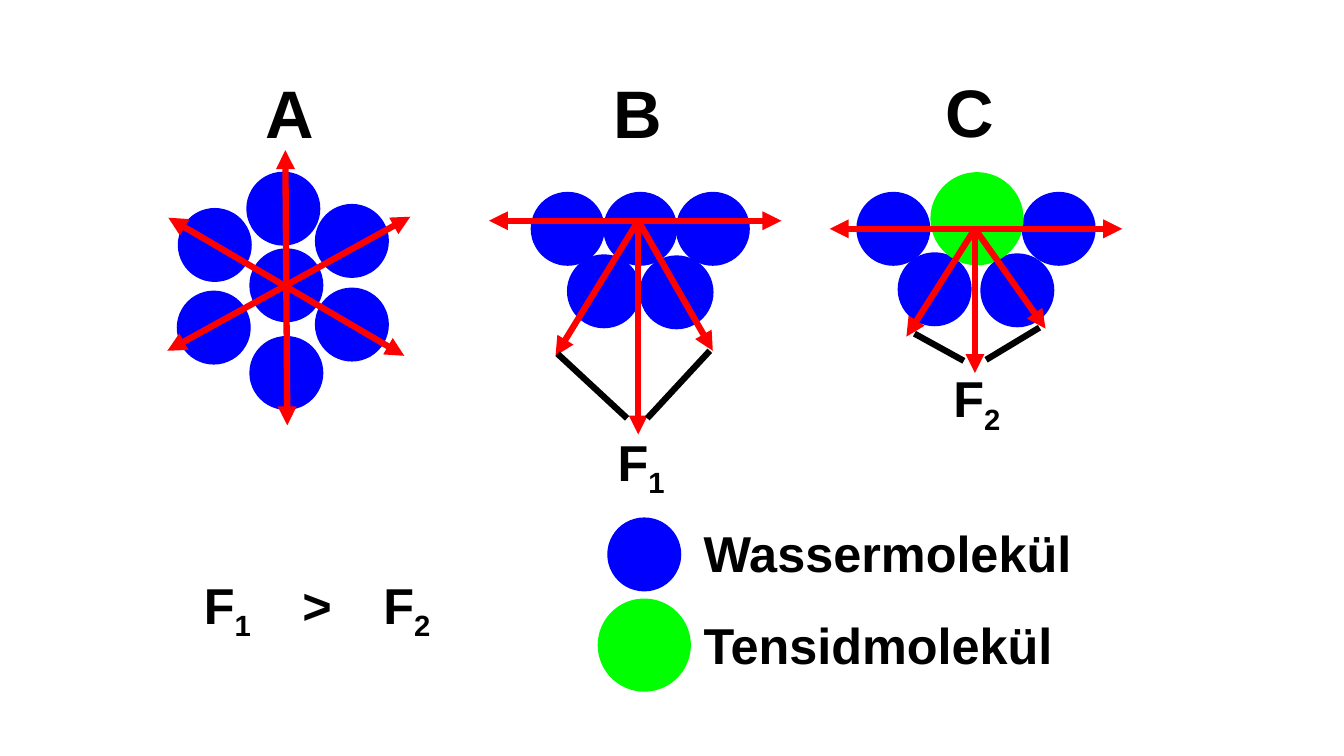
import lxml.etree
import pptx
import pptx.dml.color
import pptx.enum.shapes
import pptx.enum.text
import pptx.oxml.ns
import pptx.util

Inches = pptx.util.Inches
WATER, SURFACTANT, FORCE, BLACK = "0000FF", "00FF00", "FF0000", "000000"
DIAMETER = {WATER: 0.72, SURFACTANT: 0.91}
LABEL_WIDTH = 1.33

# Each cluster is laid out around its hub, the point where the forces start.
CLUSTERS = [
    {
        "hub": (2.84, 2.83), "title": "A", "title_at": (0.03, -1.72),
        "molecules": [(WATER, -0.71, -0.4), (WATER, -0.03, -0.76), (WATER, 0.65, -0.44),
                      (WATER, 0, 0), (WATER, -0.72, 0.42), (WATER, 0, 0.87),
                      (WATER, 0.65, 0.39)],
        "balanced": [((1.23, -0.68), (-1.18, 0.65)), ((-0.01, -1.34), (0.01, 1.39)),
                     ((-1.17, -0.67), (1.17, 0.7))],
        "forces": [], "parallels": [], "resultant": None,
    },
    {
        "hub": (6.33, 2.19), "title": "B", "title_at": (0, -1.08),
        "molecules": [(WATER, -0.7, 0.08), (WATER, 0.02, 0.08), (WATER, 0.74, 0.08),
                      (WATER, -0.34, 0.7), (WATER, 0.38, 0.71)],
        "balanced": [((1.42, 0), (-1.48, 0))],
        "forces": [(0, 2.12), (0.74, 1.29), (-0.82, 1.34)],
        "parallels": [((-0.8, 1.32), (-0.11, 1.96)), ((0.09, 1.96), (0.71, 1.29))],
        "resultant": ("1", 0.03, 2.39),
    },
    {
        "hub": (9.67, 2.27), "title": "C", "title_at": (-0.05, -1.17),
        "molecules": [(WATER, -0.81, 0), (WATER, -0.4, 0.6), (WATER, 0.42, 0.61),
                      (WATER, 0.83, 0), (SURFACTANT, 0.02, -0.1)],
        "balanced": [((1.46, 0), (-1.44, 0))],
        "forces": [(-0.68, 1.07), (0, 1.43), (0.7, 0.99)],
        "parallels": [((-0.6, 1.04), (-0.11, 1.31)), ((0.11, 1.3), (0.64, 0.98))],
        "resultant": ("2", 0.02, 1.68),
    },
]


def color(value):
    return pptx.dml.color.RGBColor.from_string(value)


def add_molecule(page, kind, center_x, center_y):
    size = DIAMETER[kind]
    ball = page.shapes.add_shape(
        pptx.enum.shapes.MSO_SHAPE.OVAL, Inches(center_x - size / 2),
        Inches(center_y - size / 2), Inches(size), Inches(size))
    ball.shadow.inherit = False
    ball.fill.solid()
    ball.fill.fore_color.rgb = color(kind)
    ball.line.color.rgb = color(kind)
    ball.line.width = pptx.util.Pt(1)


def add_line(page, hub, start, end, stroke, arrowheads=()):
    """Draw between two offsets from the hub; arrowheads names headEnd, tailEnd or both."""
    ends = [Inches(origin + shift) for point in (start, end)
            for origin, shift in zip(hub, point)]
    line = page.shapes.add_connector(pptx.enum.shapes.MSO_CONNECTOR.STRAIGHT, *ends)
    line.line.color.rgb = color(stroke)
    line.line.width = pptx.util.Pt(4.5)
    outline = line.line._get_or_add_ln()
    for name in arrowheads:
        lxml.etree.SubElement(outline, pptx.oxml.ns.qn(f"a:{name}"), type="triangle")
    lxml.etree.SubElement(line._element.spPr, pptx.oxml.ns.qn("a:effectLst"))


def add_text(page, text, left, middle, width=LABEL_WIDTH, size=36, subscript="",
             align=pptx.enum.text.PP_ALIGN.CENTER):
    height = 0.71 if size == 36 else 0.91
    box = page.shapes.add_textbox(
        Inches(left), Inches(middle - height / 2), Inches(width), Inches(height))
    box.text_frame.word_wrap = True
    para = box.text_frame.paragraphs[0]
    para.text = text
    para.alignment = align
    if subscript:
        span = para.add_run()
        span.text = subscript
        span._r.get_or_add_rPr().set("baseline", "-25000")
    for span in para.runs:
        span.font.name = "Arial"
        span.font.size = pptx.util.Pt(size)
        span.font.bold = True
        span.font.color.rgb = color(BLACK)


def add_cluster(page, cluster):
    hub = hub_x, hub_y = cluster["hub"]
    label_left = hub_x - LABEL_WIDTH / 2
    title_x, title_y = cluster["title_at"]
    add_text(page, cluster["title"], label_left + title_x, hub_y + title_y, size=48)
    for kind, x, y in cluster["molecules"]:
        add_molecule(page, kind, hub_x + x, hub_y + y)
    for start, end in cluster["balanced"]:
        add_line(page, hub, start, end, FORCE, ("headEnd", "tailEnd"))
    for end in cluster["forces"]:
        add_line(page, hub, (0, 0), end, FORCE, ("tailEnd",))
    for start, end in cluster["parallels"]:
        add_line(page, hub, start, end, BLACK)
    if cluster["resultant"]:
        index, x, y = cluster["resultant"]
        add_text(page, "F", label_left + x, hub_y + y, subscript=index)


def add_legend(page, left, top):
    rows = [(WATER, "Wassermolekül", 0.36, 0.35), (SURFACTANT, "Tensidmolekül", 1.26, 1.26)]
    for kind, name, ball_y, text_y in rows:
        add_molecule(page, kind, left + 0.45, top + ball_y)
        add_text(page, name, left + 0.94, top + text_y, width=4.87,
                 align=pptx.enum.text.PP_ALIGN.LEFT)


def add_comparison(page, left, middle):
    for column, (text, index) in enumerate([("F", "1"), (">", ""), ("F", "2")]):
        add_text(page, text, left + column * 0.89, middle, subscript=index)


def main():
    deck = pptx.Presentation()
    deck.slide_width, deck.slide_height = Inches(13.33), Inches(7.5)
    page = deck.slides.add_slide(deck.slide_layouts.get_by_name("Blank"))
    for cluster in CLUSTERS:
        add_cluster(page, cluster)
    add_legend(page, 5.94, 5.14)
    add_comparison(page, 1.59, 6)
    deck.save("out.pptx")


if __name__ == "__main__":
    main()
